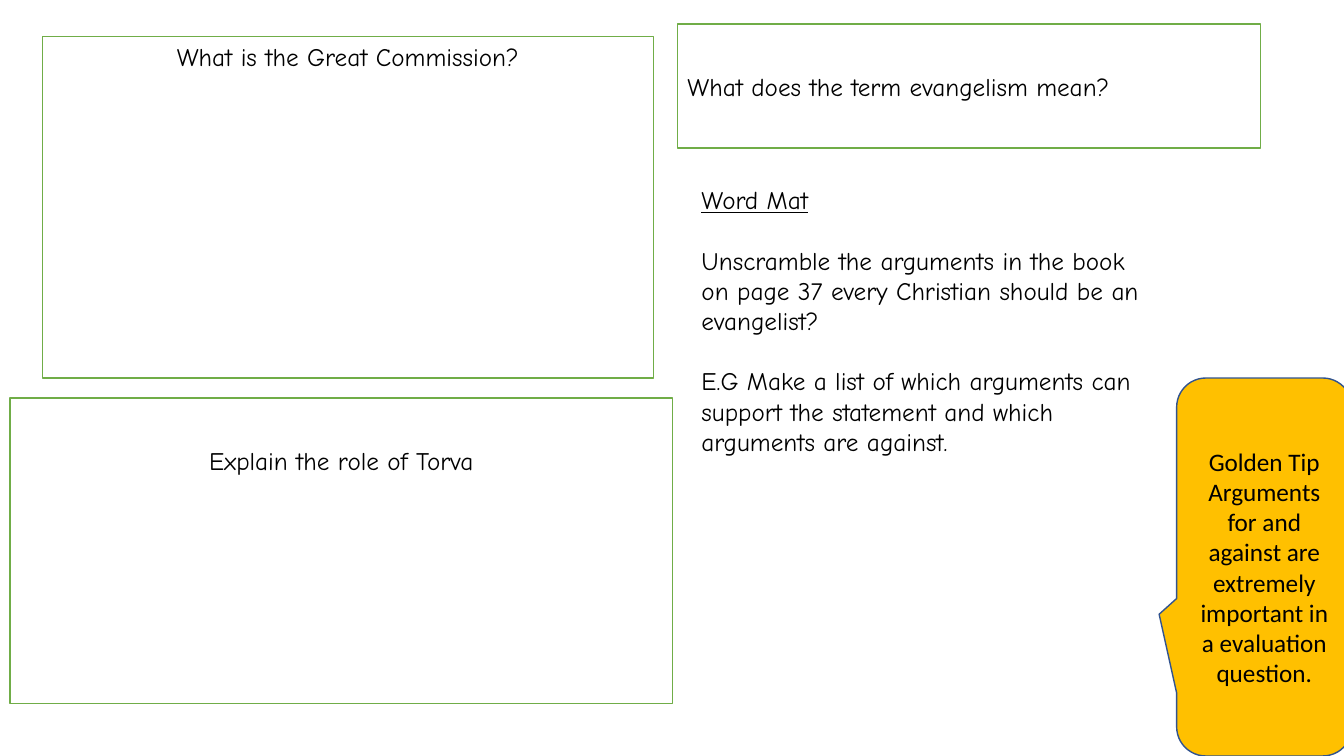
from pptx import Presentation
from pptx.dml.color import RGBColor
from pptx.enum.shapes import MSO_SHAPE
from pptx.enum.text import MSO_ANCHOR, PP_ALIGN
from pptx.util import Inches, Pt

WHITE = RGBColor(0xFF, 0xFF, 0xFF)
BLACK = RGBColor(0x00, 0x00, 0x00)
GREEN = RGBColor(0x70, 0xAD, 0x47)
GOLD = RGBColor(0xFF, 0xC0, 0x00)
NAVY = RGBColor(0x31, 0x53, 0x8F)

TASK_FONT, TIP_FONT = "Comic Neue", "Calibri"
LINE_HEIGHT = 21.6  # points

# Areas are left, top, width, height in percent of the slide.
# Each question: text, area, alignment, anchor, top inset in inches.
QUESTIONS = [
    ("What is the Great Commission?", (3.15, 4.8, 45.46, 45.2),
     PP_ALIGN.CENTER, MSO_ANCHOR.TOP, 0.05),
    ("Explain the role of Torva", (0.75, 52.67, 49.29, 40.4),
     PP_ALIGN.CENTER, MSO_ANCHOR.TOP, 0.47),
    ("What does the term evangelism mean?", (50.41, 3.2, 43.36, 16.4),
     PP_ALIGN.LEFT, MSO_ANCHOR.MIDDLE, 0.05),
]
TIP = [
    "Golden Tip",
    "Arguments for and against are extremely important in a evaluation question.",
]
TIP_AREA = (87.55, 50, 13.05, 50)
TIP_POINTER = (-0.6, 1 / 8, 1 / 6)
WORD_MAT = [
    "Word Mat",
    "Unscramble the arguments in the book on page 37 every Christian should be an evangelist?",
    "E.G Make a list of which arguments can support the statement and which arguments are against.",
]
WORD_MAT_AREA = (51.46, 23.73, 34.13, 37.73)

prs = Presentation()
prs.slide_width, prs.slide_height = Inches(13.33), Inches(7.5)
slide = prs.slides.add_slide(prs.slide_layouts[6])


def to_lengths(area):
    """Turn percentages of the slide into left, top, width, height."""
    sides = (prs.slide_width, prs.slide_height) * 2
    return [round(side * share / 100) for side, share in zip(sides, area)]


def write(shape, paragraphs, font=TASK_FONT, align=PP_ALIGN.LEFT,
          anchor=MSO_ANCHOR.MIDDLE, top=0.05, gap=0, underline_first=False):
    frame = shape.text_frame
    frame.word_wrap = True
    frame.vertical_anchor = anchor
    frame.margin_left = frame.margin_right = Inches(0.1)
    frame.margin_top, frame.margin_bottom = Inches(top), Inches(0.05)
    for i, text in enumerate(paragraphs):
        paragraph = frame.paragraphs[0] if i == 0 else frame.add_paragraph()
        paragraph.alignment = align
        if i:
            paragraph.space_before = Pt(gap)
        run = paragraph.add_run()
        run.text = text
        run.font.name, run.font.size = font, Pt(18)
        run.font.color.rgb = BLACK
        run.font.underline = underline_first and i == 0


def add_panel(kind, area, fill, line):
    panel = slide.shapes.add_shape(kind, *to_lengths(area))
    panel.shadow.inherit = False
    panel.fill.solid()
    panel.fill.fore_color.rgb = fill
    panel.line.color.rgb = line
    panel.line.width = Pt(1)
    return panel


for question, area, align, anchor, top in QUESTIONS:
    box = add_panel(MSO_SHAPE.RECTANGLE, area, WHITE, GREEN)
    write(box, [question], align=align, anchor=anchor, top=top)

tip = add_panel(MSO_SHAPE.ROUNDED_RECTANGULAR_CALLOUT, TIP_AREA, GOLD, NAVY)
for i, value in enumerate(TIP_POINTER):
    tip.adjustments[i] = value
write(tip, TIP, font=TIP_FONT, align=PP_ALIGN.CENTER)

word_mat = slide.shapes.add_textbox(*to_lengths(WORD_MAT_AREA))
write(word_mat, WORD_MAT, anchor=MSO_ANCHOR.TOP, gap=LINE_HEIGHT, underline_first=True)

prs.save("out.pptx")
